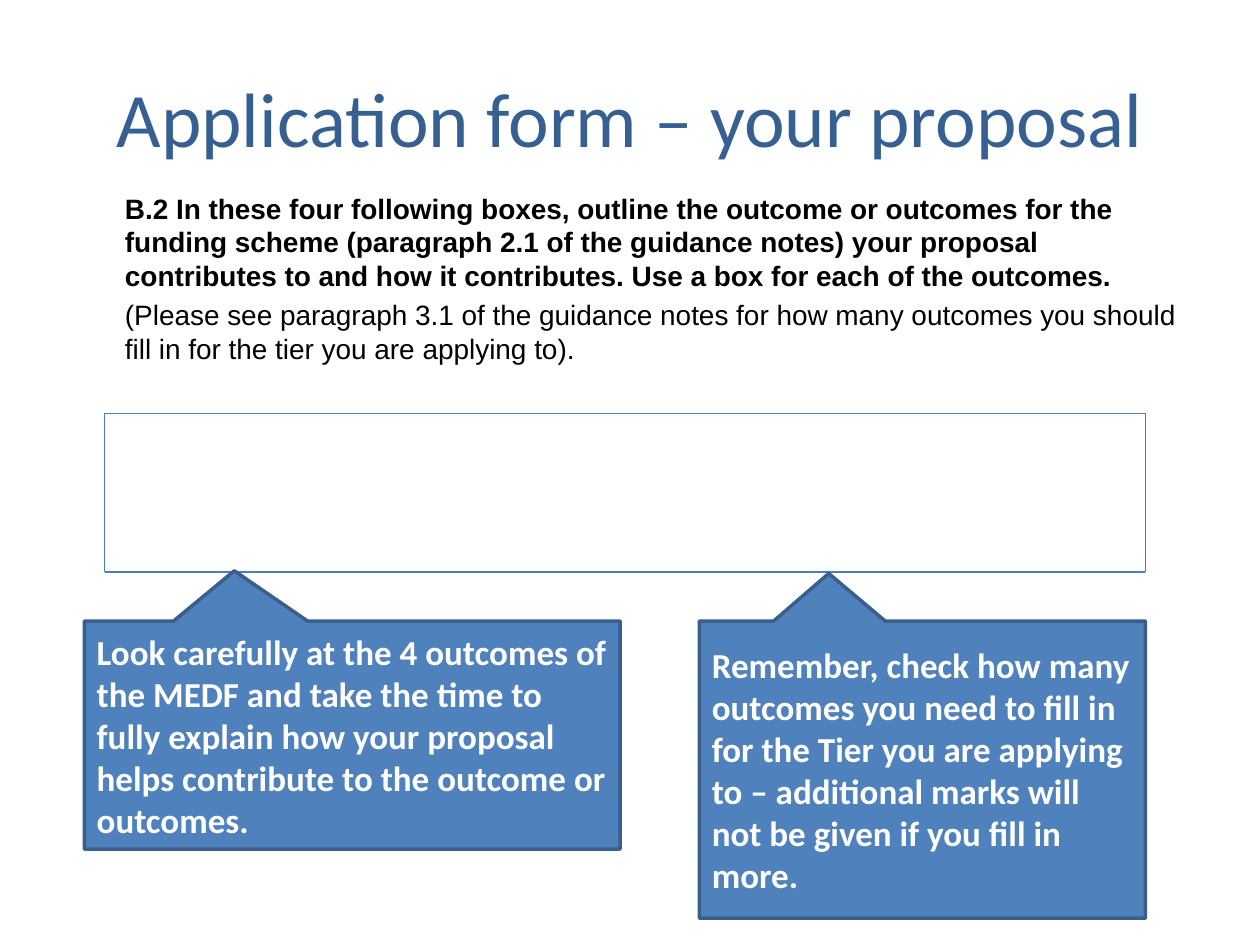
import pptx
import pptx.dml.color
import pptx.enum.shapes
import pptx.enum.text
import pptx.oxml.ns
import pptx.util
from lxml import etree

Cm, Pt = pptx.util.Cm, pptx.util.Pt
RGBColor = pptx.dml.color.RGBColor
MSO_ANCHOR = pptx.enum.text.MSO_ANCHOR
PP_ALIGN = pptx.enum.text.PP_ALIGN

TITLE_BLUE = RGBColor(0x37, 0x60, 0x92)
FRAME_BLUE = RGBColor(0x4B, 0x7E, 0xBC)
FILL_BLUE = RGBColor(0x4F, 0x81, 0xBD)
EDGE_BLUE = RGBColor(0x3A, 0x5F, 0x8C)
BLACK = RGBColor(0, 0, 0)
WHITE = RGBColor(0xFF, 0xFF, 0xFF)

TITLE = "Application form – your proposal"
QUESTION = [  # text, bold
    ("B.2 In these four following boxes, outline the outcome or outcomes for "
     "the funding scheme (paragraph 2.1 of the guidance notes) your proposal "
     "contributes to and how it contributes. Use a box for each of the "
     "outcomes.", True),
    ("(Please see paragraph 3.1 of the guidance notes for how many outcomes "
     "you should fill in for the tier you are applying to).", False),
]
ANSWER_BOX = (2.11, 8.33, 23.09, 11.53)  # left, top, right, bottom
CALLOUT_TOP = 12.52
CALLOUTS = [  # left, width, height, tip offset, text
    (1.7, 10.8, 4.6, (-0.22, -0.72),
     "Look carefully at the 4 outcomes of the MEDF and take the time to fully "
     "explain how your proposal helps contribute to the outcome or outcomes."),
    (14.1, 8.99, 5.99, (-0.21, -0.66),
     "Remember, check how many outcomes you need to fill in for the Tier you "
     "are applying to – additional marks will not be given if you fill in "
     "more."),
]


def style(p, name, size, color, bold=False, align=PP_ALIGN.LEFT):
    p.alignment = align
    p.font.name = name
    p.font.size = Pt(size)
    p.font.bold = bold
    p.font.color.rgb = color


def add_text_box(s, left, top, width, height, anchor):
    sp = s.shapes.add_textbox(Cm(left), Cm(top), Cm(width), Cm(height))
    tf = sp.text_frame
    tf.word_wrap = True
    tf.vertical_anchor = anchor
    return tf


def add_line(s, x1, y1, x2, y2):
    line = s.shapes.add_connector(pptx.enum.shapes.MSO_CONNECTOR.STRAIGHT,
                                  Cm(x1), Cm(y1), Cm(x2), Cm(y2))
    line.line.color.rgb = FRAME_BLUE
    line.line.width = Pt(0.75)
    etree.SubElement(line._element.spPr, pptx.oxml.ns.qn("a:effectLst"))


def add_callout(s, left, width, height, tip, text):
    sp = s.shapes.add_shape(
        pptx.enum.shapes.MSO_SHAPE.RECTANGULAR_CALLOUT,
        Cm(left), Cm(CALLOUT_TOP), Cm(width), Cm(height))
    sp.shadow.inherit = False
    sp.adjustments[0], sp.adjustments[1] = tip
    sp.fill.solid()
    sp.fill.fore_color.rgb = FILL_BLUE
    sp.line.color.rgb = EDGE_BLUE
    sp.line.width = Pt(2)
    tf = sp.text_frame
    tf.word_wrap = True
    tf.vertical_anchor = MSO_ANCHOR.MIDDLE
    tf.text = text
    style(tf.paragraphs[0], "Calibri", 20, WHITE, bold=True)


def main():
    prs = pptx.Presentation()
    prs.slide_width, prs.slide_height = Cm(25.4), Cm(19.05)
    s = prs.slides.add_slide(prs.slide_layouts[6])

    tf = add_text_box(s, 1.27, 0.76, 22.86, 3.18, MSO_ANCHOR.MIDDLE)
    tf.text = TITLE
    style(tf.paragraphs[0], "Calibri", 44, TITLE_BLUE, align=PP_ALIGN.CENTER)

    tf = add_text_box(s, 1.3, 3.73, 22.86, 4.19, MSO_ANCHOR.TOP)
    tf.margin_left = Cm(1.22)
    tf.text = "\n".join(text for text, _ in QUESTION)
    for p, (_, bold) in zip(tf.paragraphs, QUESTION):
        style(p, "Arial", 16, BLACK, bold)
        p.space_before = Pt(3.2)

    left, top, right, bottom = ANSWER_BOX
    for y in (top, bottom):
        add_line(s, left, y, right, y)
    for x in (left, right):
        add_line(s, x, top, x, bottom)

    for callout in CALLOUTS:
        add_callout(s, *callout)

    prs.save("out.pptx")


if __name__ == "__main__":
    main()
